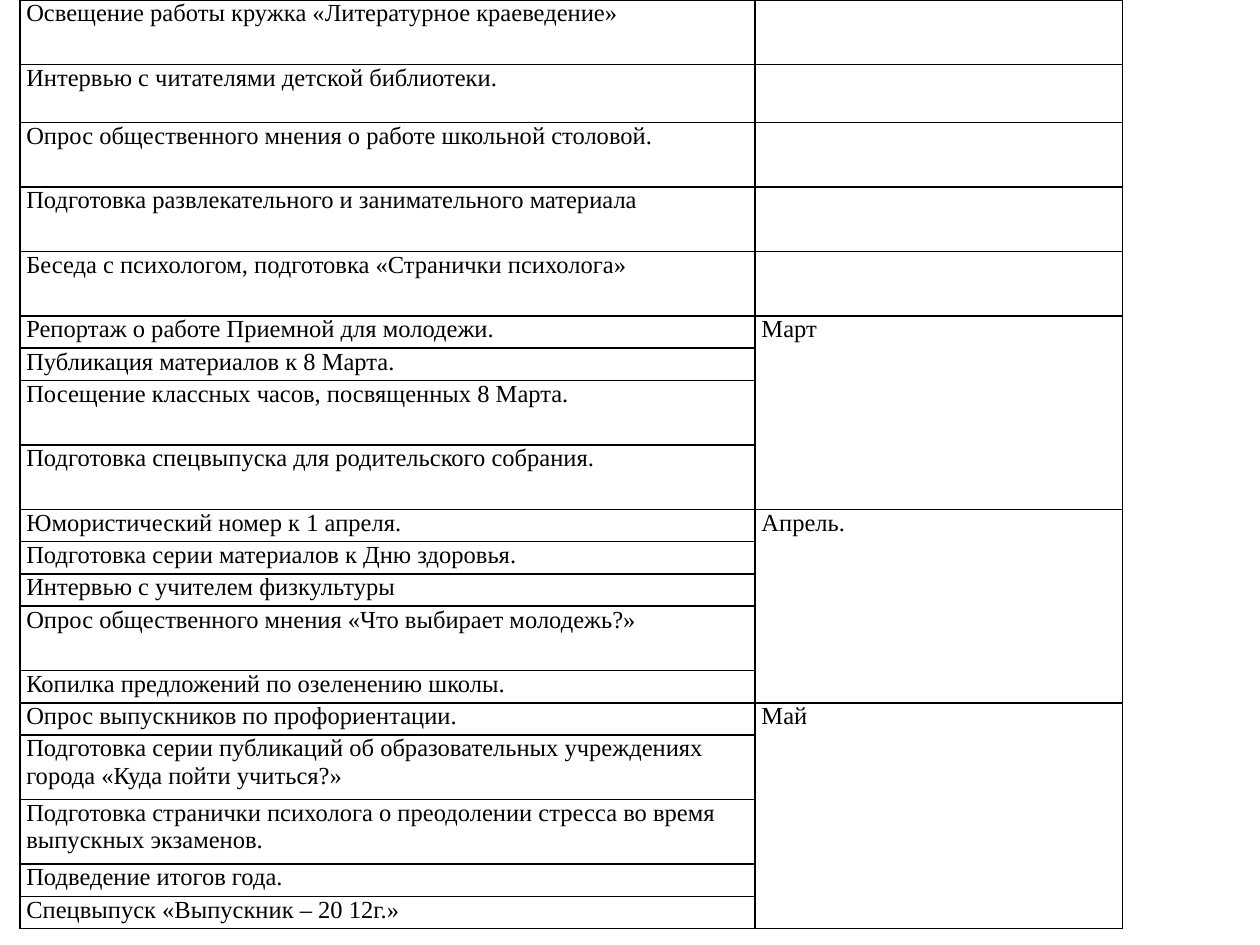
"""Build the school newspaper work plan table from March to May."""
from lxml.etree import SubElement
from pptx import Presentation
from pptx.dml.color import RGBColor
from pptx.oxml.ns import qn
from pptx.util import Cm, Pt

TALL, MEDIUM, SHORT = 1.3, 1.17, 0.65
PLAN = [
    ("", [
        ("Освещение работы кружка «Литературное краеведение»", TALL)]),
    ("", [
        ("Интервью с читателями детской библиотеки.", MEDIUM)]),
    ("", [
        ("Опрос общественного мнения о работе школьной столовой.", TALL)]),
    ("", [
        ("Подготовка развлекательного и занимательного материала", TALL)]),
    ("", [
        ("Беседа с психологом, подготовка «Странички психолога»", TALL)]),
    ("Март", [
        ("Репортаж о работе Приемной для молодежи.", SHORT),
        ("Публикация материалов к 8 Марта.", SHORT),
        ("Посещение классных часов, посвященных 8 Марта.", TALL),
        ("Подготовка спецвыпуска для родительского собрания.", TALL)]),
    ("Апрель.", [
        ("Юмористический номер к 1 апреля.", SHORT),
        ("Подготовка серии материалов к Дню здоровья.", SHORT),
        ("Интервью с учителем физкультуры", SHORT),
        ("Опрос общественного мнения «Что выбирает молодежь?»", TALL),
        ("Копилка предложений по озеленению школы.", SHORT)]),
    ("Май", [
        ("Опрос выпускников по профориентации.", SHORT),
        ("Подготовка серии публикаций об образовательных учреждениях "
         "города «Куда пойти учиться?»", TALL),
        ("Подготовка странички психолога о преодолении стресса во время "
         "выпускных экзаменов.", TALL),
        ("Подведение итогов года.", SHORT),
        ("Спецвыпуск «Выпускник – 20 12г.»", SHORT)]),
]


def color(code):
    return RGBColor.from_string(code)


class PlanPage:
    font = "Times New Roman"
    size = Pt(14)
    ink = "000000"

    def __init__(self, deck):
        self.page = deck.slides.add_slide(deck.slide_layouts[6])

    def border(self, cell):
        properties = cell._tc.get_or_add_tcPr()
        for side in ("a:lnL", "a:lnR", "a:lnT", "a:lnB"):
            line = SubElement(properties, qn(side), w=str(Pt(1)))
            fill = SubElement(line, qn("a:solidFill"))
            SubElement(fill, qn("a:srgbClr"), val=self.ink)

    def cell_text(self, cell, text):
        cell.text_frame.text = text
        para = cell.text_frame.paragraphs[0]
        para.font.size = self.size
        for span in para.runs:
            span.font.name = self.font
            span.font.size = self.size
            span.font.color.rgb = color(self.ink)

    def style_cell(self, cell):
        cell.margin_left = cell.margin_right = Cm(0.13)
        cell.margin_top = cell.margin_bottom = 0
        self.border(cell)
        cell.fill.background()

    def plan_table(self, plan, left, top, widths):
        heights = [height for _, tasks in plan for _, height in tasks]
        table = self.page.shapes.add_table(
            len(heights), len(widths), Cm(left), Cm(top),
            Cm(sum(widths)), Cm(sum(heights))).table
        table.first_row = table.horz_banding = False
        for column, width in zip(table.columns, widths):
            column.width = Cm(width)
        for row, height in zip(table.rows, heights):
            row.height = Cm(height)
        for cell in table.iter_cells():
            self.style_cell(cell)
        first = 0
        for month, tasks in plan:
            last = first + len(tasks) - 1
            self.cell_text(table.cell(first, 1), month)
            if last > first:
                table.cell(first, 1).merge(table.cell(last, 1))
            for index, (task, _) in enumerate(tasks, first):
                self.cell_text(table.cell(index, 0), task)
            first = last + 1


def main():
    deck = Presentation()
    deck.slide_width, deck.slide_height = Cm(25.4), Cm(19.05)
    PlanPage(deck).plan_table(PLAN, 0.4, 0, (14.82, 7.41))
    deck.save("out.pptx")


if __name__ == "__main__":
    main()
